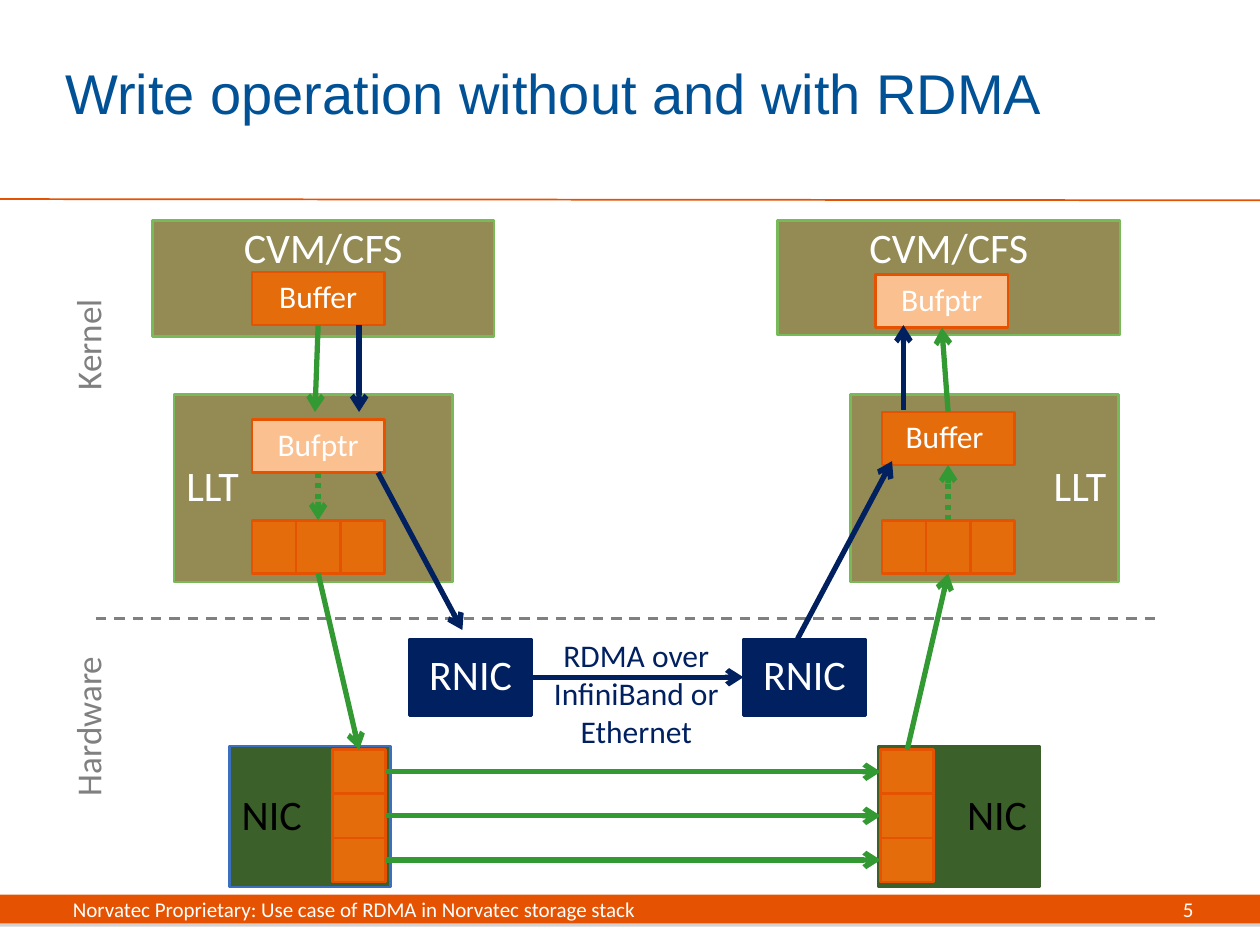
from dataclasses import dataclass
from lxml.etree import SubElement
from pptx import Presentation
from pptx.dml.color import RGBColor
from pptx.enum.dml import MSO_LINE
from pptx.enum.shapes import MSO_CONNECTOR, MSO_SHAPE
from pptx.enum.text import MSO_ANCHOR, PP_ALIGN
from pptx.oxml.ns import qn
from pptx.util import Inches, Pt

WHITE, BLACK, GRAY = "FFFFFF", "000000", "808080"
NAVY, GREEN, FLAME = "002060", "339933", "E55302"
OLIVE, LEAF, MOSS = "948A54", "78B959", "3B6029"
AMBER, PEACH = "E46C0A", "FAC090"
LEFT, MID, RIGHT = PP_ALIGN.LEFT, PP_ALIGN.CENTER, PP_ALIGN.RIGHT
TOP, CORE = MSO_ANCHOR.TOP, MSO_ANCHOR.MIDDLE
NORTH, WEST, SOUTH, EAST = range(4)

deck = Presentation()
deck.slide_width, deck.slide_height = Inches(10), Inches(7.5)
CELL = deck.slide_width / 100
slide = deck.slides.add_slide(deck.slide_layouts[6])
shapes = slide.shapes


@dataclass
class Box:
    col: float
    row: float
    wide: float
    high: float
    fill: str
    line: str
    text: str = ""
    size: int = 24
    ink: str = WHITE
    align: PP_ALIGN = MID
    anchor: MSO_ANCHOR = CORE


@dataclass
class Arrow:
    start: tuple
    end: tuple
    ink: str = GREEN
    dash: MSO_LINE | None = None


def grid(*cells: float) -> list[int]:
    return [round(c * CELL) for c in cells]


def tint(code: str) -> RGBColor:
    return RGBColor.from_string(code)


def write(shape, text: str, *, size: int, ink: str, font: str = "Calibri",
          align=LEFT, anchor=CORE, space: float = 1.0) -> None:
    frame = shape.text_frame
    frame.word_wrap = True
    frame.vertical_anchor = anchor
    para = frame.paragraphs[0]
    para.alignment, para.line_spacing = align, space
    run = para.add_run()
    run.text = text
    run.font.size, run.font.name = Pt(size), font
    run.font.color.rgb = tint(ink)


def label(place: tuple, text: str, turn: int = 0, **style) -> None:
    shape = shapes.add_textbox(*grid(*place))
    shape.rotation = turn
    write(shape, text, **style)


def block(box: Box):
    place = grid(box.col, box.row, box.wide, box.high)
    shape = shapes.add_shape(MSO_SHAPE.RECTANGLE, *place)
    shape.shadow.inherit = False
    shape.fill.solid()
    shape.fill.fore_color.rgb = tint(box.fill)
    shape.line.color.rgb = tint(box.line)
    shape.line.width = Pt(1.5)
    if box.text:
        write(shape, box.text, size=box.size, ink=box.ink,
              align=box.align, anchor=box.anchor, space=0.9)
    return shape


def slots(col: float, row: float, down: bool = False) -> list:
    step, span = 3.5, 4.2
    if down:
        return [block(Box(col, row + i * step, span, step, AMBER, FLAME))
                for i in range(3)]
    return [block(Box(col + i * step, row, step, span, AMBER, FLAME))
            for i in range(3)]


def wire(start: tuple, end: tuple, ink: str, width: float, dash=None):
    line = shapes.add_connector(MSO_CONNECTOR.STRAIGHT, *grid(*start, *end))
    line.line.color.rgb = tint(ink)
    line.line.width = Pt(width)
    if dash:
        line.line.dash_style = dash
    SubElement(line._element.spPr, qn("a:effectLst"))
    return line


def draw(arrow: Arrow) -> None:
    joins = [isinstance(p[0], (int, float)) for p in (arrow.start, arrow.end)]
    spots = [p if free else (0, 0)
             for p, free in zip((arrow.start, arrow.end), joins)]
    line = wire(*spots, arrow.ink, 3, arrow.dash)
    if not joins[0]:
        line.begin_connect(*arrow.start)
    if not joins[1]:
        line.end_connect(*arrow.end)
    SubElement(line.line._get_or_add_ln(), qn("a:tailEnd"), type="arrow")


def shade(shape) -> None:
    spot = shape._element.spPr.find(qn("a:effectLst"))
    cast = SubElement(spot, qn("a:outerShdw"), blurRad="0",
                      dist=str(Pt(1.8)), dir="5400000", rotWithShape="0")
    hue = SubElement(cast, qn("a:srgbClr"), val=GRAY)
    SubElement(hue, qn("a:alpha"), val="35000")


bar = block(Box(0, 71, 100, 2.3, FLAME, FLAME))
bar.line.fill.background()
shade(bar)
wire((0, 15.8), (100, 15.9), FLAME, 1)
wire((7.6, 49.1), (91.9, 49.1), GRAY, 1.5, MSO_LINE.DASH)

label((4.2, 2.7, 91.7, 9.2), "Write operation without and with RDMA",
      size=32, ink="005195", font="Arial")
label((4.8, 71, 90.5, 2.3),
      "Norvatec Proprietary: Use case of RDMA in Norvatec storage stack",
      size=12, ink=WHITE)
label((83.8, 71, 11.9, 2.3), "5", size=12, ink=WHITE, align=RIGHT)
label((42.5, 50, 16, 10), "RDMA over InfiniBand or Ethernet",
      size=18, ink=NAVY, align=MID, anchor=TOP)
for place, name in (((-1.5, 25.5, 17, 3.7), "Kernel"),
                    ((-4.6, 55.8, 23.2, 3.7), "Hardware")):
    label(place, name, 270, size=20, ink=GRAY, align=MID, anchor=TOP, space=0.9)

for panel in (
    Box(12.1, 17.5, 27.1, 9.2, OLIVE, LEAF, "CVM/CFS", anchor=TOP),
    Box(61.7, 17.5, 27.2, 9.1, OLIVE, LEAF, "CVM/CFS", anchor=TOP),
    Box(13.8, 31.3, 22.1, 14.9, OLIVE, LEAF, "LLT", align=LEFT),
    Box(67.5, 31.3, 21.3, 14.9, OLIVE, LEAF, "LLT", align=RIGHT),
    Box(18.2, 59.2, 12.8, 11.2, MOSS, "3C6FBD", "NIC", 24, BLACK, LEFT),
    Box(69.7, 59.2, 12.8, 11.2, MOSS, MOSS, "NIC", 24, BLACK, RIGHT),
):
    block(panel)

source, remote, sender, target = [
    block(Box(col, row, 10.5, 4.2, fill, FLAME, text, 18))
    for col, row, fill, text in (
        (20, 21.6, AMBER, "Buffer"), (69.5, 21.8, PEACH, "Bufptr"),
        (20, 33.3, PEACH, "Bufptr"), (70, 32.7, AMBER, "Buffer "))]
near, far = [block(Box(col, 50.7, 9.7, 6.1, NAVY, NAVY, "RNIC"))
             for col in (32.5, 59)]
split, merge = slots(20, 41.3), slots(70, 41.3)
queue, inbox = slots(26.4, 59.5, True), slots(69.9, 59.5, True)

for arrow in (
    Arrow((source, SOUTH), (25, 32.7)),
    Arrow((sender, SOUTH), (split[1], NORTH), dash=MSO_LINE.ROUND_DOT),
    Arrow((split[1], SOUTH), (queue[0], NORTH)),
    *(Arrow((a, EAST), (b, WEST)) for a, b in zip(queue, inbox)),
    Arrow((inbox[0], NORTH), (merge[1], SOUTH)),
    Arrow((merge[1], NORTH), (target, SOUTH), dash=MSO_LINE.ROUND_DOT),
    Arrow((target, NORTH), (remote, SOUTH)),
    Arrow((28.5, 25.8), (28.5, 32.7), NAVY),
    Arrow((30, 37.5), (36.7, 50), NAVY),
    Arrow((near, EAST), (far, WEST), NAVY),
    Arrow((63.3, 50.7), (70.8, 36.6), NAVY),
    Arrow((71.7, 32.5), (71.7, 25.8), NAVY),
):
    draw(arrow)

deck.save("out.pptx")
